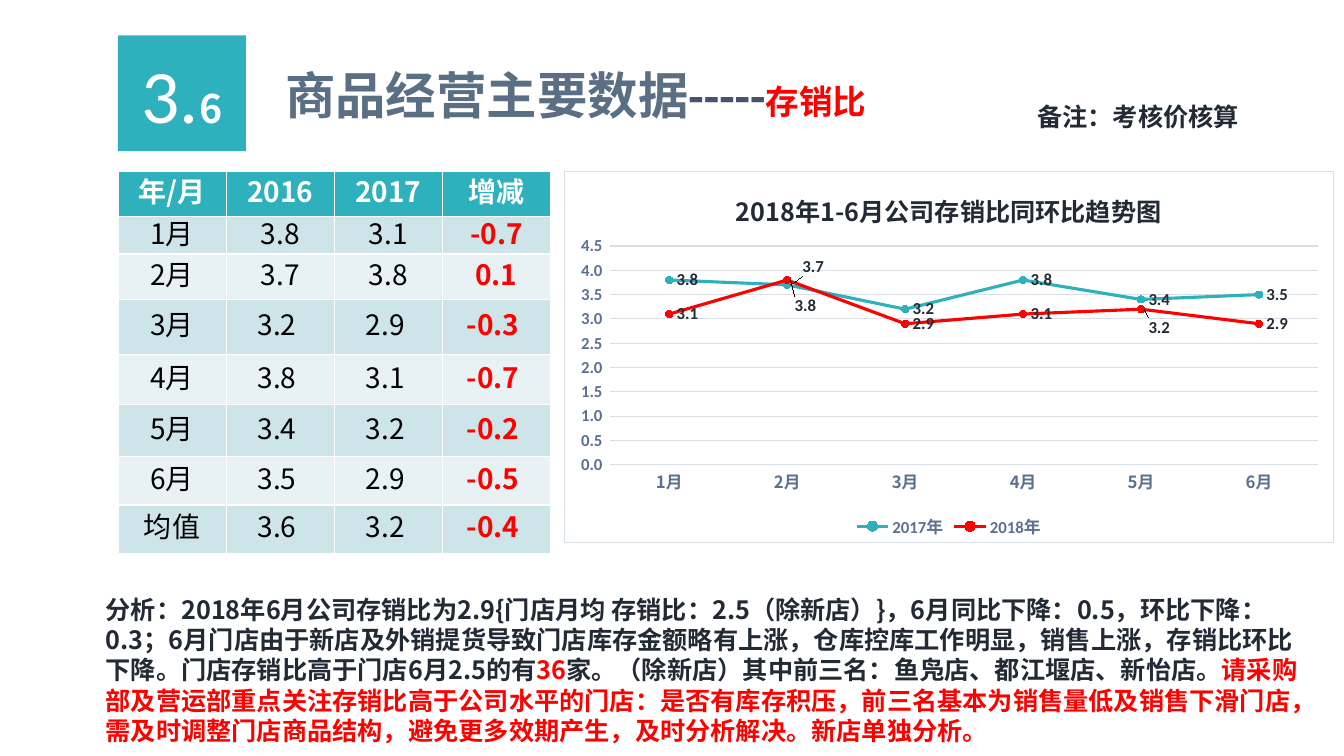
from lxml.etree import SubElement
from pptx import Presentation
from pptx.chart.data import CategoryChartData
from pptx.dml.color import RGBColor
from pptx.enum.chart import (XL_CHART_TYPE, XL_LABEL_POSITION, XL_LEGEND_POSITION,
                             XL_MARKER_STYLE, XL_TICK_MARK)
from pptx.enum.shapes import MSO_SHAPE
from pptx.enum.text import MSO_ANCHOR, PP_ALIGN
from pptx.oxml import parse_xml
from pptx.oxml.ns import nsdecls, qn
from pptx.util import Inches, Pt

LATIN, CHINESE = "Calibri", "Noto Sans CJK SC"
TEAL, RED, WHITE, BLACK = "2EB0BD", "FF0000", "FFFFFF", "000000"
INK, AXIS, GRID = "222A35", "5C718F", "D8DEE6"
BANDS = ("CDE4E8", "E8F2F4")
NUMBER_FORMAT = "0.0_ "

HEADINGS = ("年/月", "2016", "2017", "增减")
TABLE_ROWS = (
    ("1月", "3.8", "3.1", "-0.7"),
    ("2月", "3.7", "3.8", "0.1"),
    ("3月", "3.2 ", "2.9 ", "-0.3 "),
    ("4月", "3.8 ", "3.1 ", "-0.7 "),
    ("5月", "3.4 ", "3.2 ", "-0.2 "),
    ("6月", "3.5 ", "2.9 ", "-0.5 "),
    ("均值", "3.6 ", "3.2 ", "-0.4 "),
)
ROW_HEIGHTS = (0.45, 0.37, 0.45, 0.55, 0.49, 0.52, 0.48, 0.48)

MONTHS = [f"{month}月" for month in range(1, 7)]
# Name, colour, values, and the labels moved off their points (as chart fractions)
SERIES = (
    ("2017年", TEAL, (3.8, 3.7, 3.2, 3.8, 3.4, 3.5), {1: (0.01, -0.05)}),
    ("2018年", RED, (3.1, 3.8, 2.9, 3.1, 3.2, 2.9), {1: (0, 0.07), 4: (0, 0.05)}),
)


def color(value):
    return RGBColor.from_string(value)


def style_font(font, size, ink, name=LATIN, bold=True):
    font.size, font.bold, font.name = Pt(size), bold, name
    font.color.rgb = color(ink)


def add_run(paragraph, text, size, ink, name=CHINESE, bold=True):
    run = paragraph.add_run()
    run.text = text
    style_font(run.font, size, ink, name, bold)
    SubElement(run.font._element, qn("a:ea")).set("typeface", CHINESE)


def add_text(slide, box, runs, line_height=None):
    shape = slide.shapes.add_textbox(*map(Inches, box))
    shape.text_frame.word_wrap = True
    paragraph = shape.text_frame.paragraphs[0]
    if line_height:
        paragraph.line_spacing = Pt(line_height)
    for run in runs:
        add_run(paragraph, *run)


def add_badge(slide, box):
    shape = slide.shapes.add_shape(MSO_SHAPE.RECTANGLE, *map(Inches, box))
    shape.shadow.inherit = False
    shape.fill.solid()
    shape.fill.fore_color.rgb = color(TEAL)
    shape.line.fill.background()
    shape.text_frame.vertical_anchor = MSO_ANCHOR.MIDDLE
    paragraph = shape.text_frame.paragraphs[0]
    paragraph.alignment = PP_ALIGN.CENTER
    add_run(paragraph, "3.", 54, WHITE, LATIN, False)
    add_run(paragraph, "6", 28, WHITE)


def fill_cell(cell, text, fill, ink, bold):
    cell.fill.solid()
    cell.fill.fore_color.rgb = color(fill)
    cell.vertical_anchor = MSO_ANCHOR.MIDDLE
    cell.margin_left = cell.margin_right = cell.margin_top = cell.margin_bottom = 0
    paragraph = cell.text_frame.paragraphs[0]
    paragraph.alignment = PP_ALIGN.CENTER
    paragraph.line_spacing = Pt(24)
    add_run(paragraph, text, 20, ink, bold=bold)


def add_ratio_table(slide, box):
    rows = (HEADINGS, *TABLE_ROWS)
    table = slide.shapes.add_table(len(rows), len(HEADINGS), *map(Inches, box)).table
    for column in table.columns:
        column.width = Inches(box[2] / len(HEADINGS))
    for row_index, (texts, height) in enumerate(zip(rows, ROW_HEIGHTS)):
        table.rows[row_index].height = Inches(height)
        for column_index, text in enumerate(texts):
            is_change = column_index == len(HEADINGS) - 1
            if row_index == 0:
                fill, ink, bold = TEAL, WHITE, True
            else:
                fill = BANDS[(row_index - 1) % 2]
                ink, bold = (RED, True) if is_change else (BLACK, False)
            fill_cell(table.cell(row_index, column_index), text, fill, ink, bold)


def set_layout(parent, position, **values):
    """Give a chart part a manual layout, as its child number `position`."""
    for old in parent.findall(qn("c:layout")):
        parent.remove(old)
    parts = "".join(f'<c:{key} val="{value}"/>' for key, value in values.items())
    parent.insert(position, parse_xml(
        f'<c:layout {nsdecls("c")}><c:manualLayout>{parts}</c:manualLayout></c:layout>'))


def style_line(line, ink, width):
    line.color.rgb = color(ink)
    line.width = Pt(width)


def style_axes(chart):
    category, value = chart.category_axis, chart.value_axis
    for axis, name in ((category, CHINESE), (value, LATIN)):
        axis.major_tick_mark = axis.minor_tick_mark = XL_TICK_MARK.NONE
        style_font(axis.tick_labels.font, 12, AXIS, name)
    style_line(category.format.line, GRID, 0.75)
    value.format.line.fill.background()
    style_line(value.major_gridlines.format.line, GRID, 0.75)
    value.minimum_scale, value.maximum_scale, value.major_unit = 0, 4.5, 0.5
    value.tick_labels.number_format = NUMBER_FORMAT
    value.tick_labels.number_format_is_linked = False


def style_series(series, ink, moved_labels):
    series.smooth = False
    style_line(series.format.line, ink, 2.25)
    series.marker.style, series.marker.size = XL_MARKER_STYLE.CIRCLE, 5
    series.marker.format.fill.solid()
    series.marker.format.fill.fore_color.rgb = color(ink)
    style_line(series.marker.format.line, ink, 0.75)
    labels = series.data_labels
    labels.show_value = True
    labels.position = XL_LABEL_POSITION.RIGHT
    labels.number_format, labels.number_format_is_linked = NUMBER_FORMAT, False
    style_font(labels.font, 12, INK)
    for index in moved_labels:
        label = series.points[index].data_label
        style_font(label.font, 12, INK)
        label.position = XL_LABEL_POSITION.RIGHT
    for element, (x, y) in zip(series._element.iter(qn("c:dLbl")), moved_labels.values()):
        set_layout(element, 1, x=x, y=y)


def add_trend_chart(slide, box):
    data = CategoryChartData(number_format=NUMBER_FORMAT)
    data.categories = MONTHS
    for name, _, values, _ in SERIES:
        data.add_series(name, values)
    chart = slide.shapes.add_chart(XL_CHART_TYPE.LINE_MARKERS, *map(Inches, box), data).chart
    style_font(chart.font, 10, INK, bold=False)
    chart.font._element.getparent().getparent().getparent().addprevious(parse_xml(
        f'<c:spPr {nsdecls("c", "a")}><a:solidFill><a:srgbClr val="{WHITE}"/></a:solidFill>'
        f'<a:ln w="{Pt(0.75)}"><a:solidFill><a:srgbClr val="{GRID}"/></a:solidFill></a:ln>'
        '</c:spPr>'))
    chart.has_title = True
    add_run(chart.chart_title.text_frame.paragraphs[0], "2018年1-6月公司存销比同环比趋势图", 18, INK)
    chart.has_legend = True
    chart.legend.position = XL_LEGEND_POSITION.BOTTOM
    chart.legend.include_in_layout = False
    style_font(chart.legend.font, 12, AXIS)
    chart.plots[0].vary_by_categories = False
    style_axes(chart)
    for series, (_, ink, _, moved_labels) in zip(chart.plots[0].series, SERIES):
        style_series(series, ink, moved_labels)
    set_layout(chart._chartSpace.find(".//" + qn("c:plotArea")), 0, layoutTarget="inner",
               xMode="edge", yMode="edge", x=0.06, y=0.2, w=0.92, h=0.59)


def main():
    presentation = Presentation()
    presentation.slide_width, presentation.slide_height = Inches(13.33), Inches(7.5)
    slide = presentation.slides.add_slide(presentation.slide_layouts[6])
    add_badge(slide, (1.17, 0.35, 1.27, 1.15))
    add_text(slide, (2.73, 0.55, 9.44, 0.74), (
        ("商品经营主要数据", 36, "5A6F84"),
        ("-----", 36, "44546A", LATIN),
        ("存销比", 24, RED)), 46)
    add_text(slide, (0.95, 5.84, 12.15, 1.61), (
        ("分析：2018年6月公司存销比为2.9{门店月均 存销比：2.5（除新店）}，6月同比下降：0.5，"
         "环比下降：0.3；6月门店由于新店及外销提货导致门店库存金额略有上涨，仓库控库工作明显，"
         "销售上涨，存销比环比下降。门店存销比高于门店6月2.5的有", 18, INK),
        ("36", 18, RED),
        ("家。（除新店）其中前三名：鱼凫店、都江堰店、新怡店。", 18, INK),
        ("请采购部及营运部重点关注存销比高于公司水平的门店：是否有库存积压，前三名基本为销售量低及"
         "销售下滑门店，需及时调整门店商品结构，避免更多效期产生，及时分析解决。新店单独分析。",
         18, RED)), 21.7)
    add_text(slide, (10.19, 0.96, 2.32, 0.42), (("备注：考核价核算", 18, INK, LATIN),))
    add_ratio_table(slide, (1.17, 1.7, 4.29, 3.77))
    add_trend_chart(slide, (5.59, 1.7, 7.64, 3.69))
    presentation.save("out.pptx")


if __name__ == "__main__":
    main()
